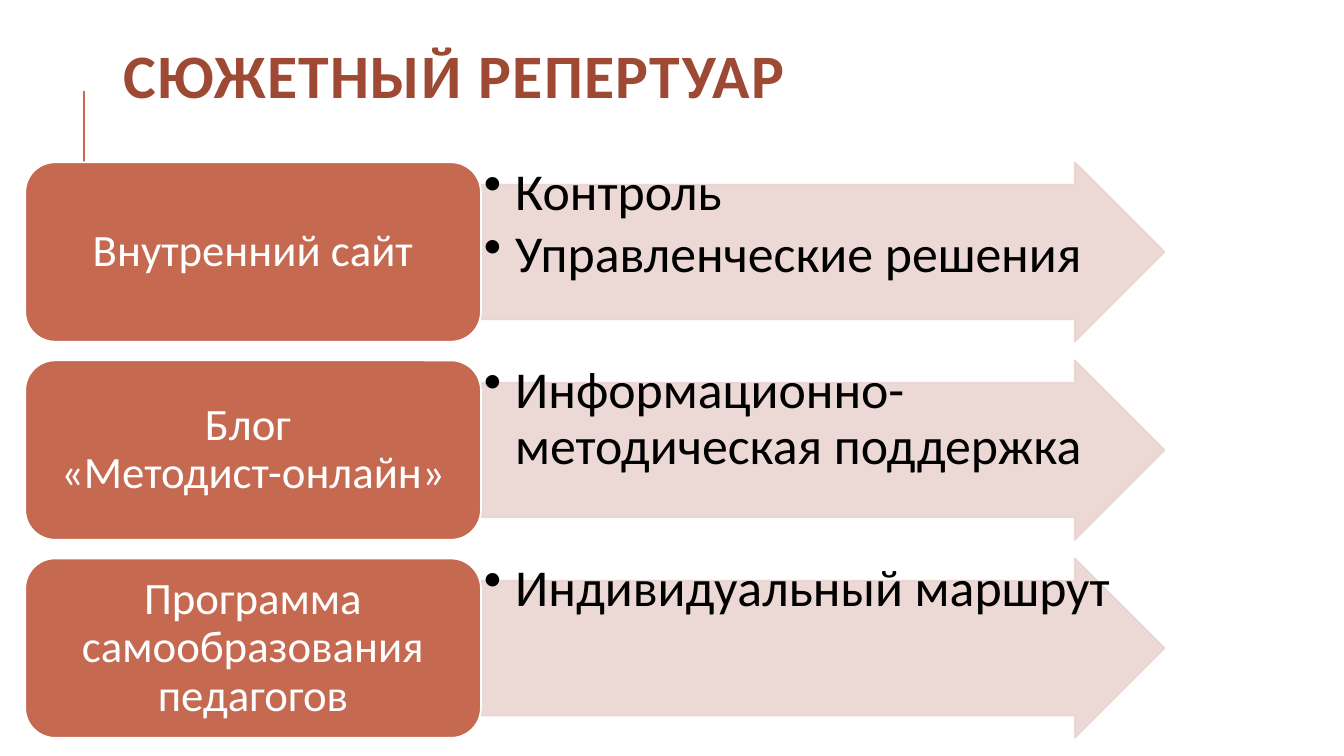
from lxml.etree import SubElement
from pptx import Presentation
from pptx.dml.color import RGBColor
from pptx.enum.shapes import MSO_CONNECTOR, MSO_SHAPE
from pptx.enum.text import MSO_ANCHOR, PP_ALIGN
from pptx.oxml.ns import qn
from pptx.util import Pt

PX = 9144  # 100 px to the inch
FONT = "Calibri"
TERRACOTTA, RUST, BLUSH = "C66951", "9E4934", "EAD4D0"
WHITE, BLACK = "FFFFFF", "000000"

LABEL_X, LABEL_W = 25, 452
ARROW_X, ARROW_W = LABEL_X + LABEL_W, 678
ROW_TOP, ROW_H, ROW_STEP = 161, 178, 196.5
ROWS = [
    ("Внутренний сайт", ["Контроль", "Управленческие решения"]),
    ("Блог \n«Методист-онлайн»", ["Информационно-методическая поддержка"]),
    ("Программа самообразования педагогов", ["Индивидуальный маршрут"]),
]


def px(n):
    return round(n * PX)


def rgb(color):
    return RGBColor.from_string(color)


def set_frame(tf, anchor, left, top, right, bottom):
    tf.word_wrap = True
    tf.vertical_anchor = anchor
    tf.margin_left, tf.margin_top = px(left), px(top)
    tf.margin_right, tf.margin_bottom = px(right), px(bottom)


def write(p, text, size, color, align=PP_ALIGN.LEFT, spacing=0.9, bold=False):
    p.text = text
    p.alignment = align
    p.line_spacing = spacing
    for r in p.runs:
        r.font.name = FONT
        r.font.size = Pt(size)
        r.font.bold = bold
        r.font.color.rgb = rgb(color)


def add_bullet(p):
    pPr = p._p.get_or_add_pPr()
    pPr.set("marL", str(px(31)))
    pPr.set("indent", str(px(-31)))
    SubElement(pPr, qn("a:buChar")).set("char", "•")


def add_block(s, kind, x, y, w, h, fill, line):
    sp = s.shapes.add_shape(kind, px(x), px(y), px(w), px(h))
    sp.shadow.inherit = False
    sp.fill.solid()
    sp.fill.fore_color.rgb = rgb(fill)
    sp.line.color.rgb = rgb(line)
    sp.line.width = Pt(1.25)
    return sp


def add_title(s):
    box = s.shapes.add_textbox(px(113), px(51), px(1063), px(113))
    set_frame(box.text_frame, MSO_ANCHOR.TOP, 10, 0, 10, 0)
    p = box.text_frame.paragraphs[0]
    write(p, "СЮЖЕТНЫЙ РЕПЕРТУАР", 44.1, RUST, spacing=0.8, bold=True)
    p.runs[0].font._element.set("spc", "100")


def add_accent_line(s):
    line = s.shapes.add_connector(
        MSO_CONNECTOR.STRAIGHT, px(83), px(190), px(83), px(90))
    line.line.color.rgb = rgb(TERRACOTTA)
    line.line.width = Pt(1.5)
    SubElement(line._element.spPr, qn("a:effectLst"))


def add_arrow(s, y):
    sp = add_block(s, MSO_SHAPE.RIGHT_ARROW, ARROW_X, y, ARROW_W, ROW_H,
                   BLUSH, BLUSH)
    sp.adjustments[0], sp.adjustments[1] = 0.75, 0.5
    for clr in sp._element.spPr.iter(qn("a:srgbClr")):
        SubElement(clr, qn("a:alpha")).set("val", "90000")


def add_bullets(s, y, items):
    box = s.shapes.add_textbox(px(ARROW_X), px(y), px(ARROW_W), px(ROW_H))
    tf = box.text_frame
    set_frame(tf, MSO_ANCHOR.TOP, 3, 3, 3, 3)
    for i, item in enumerate(items):
        p = tf.add_paragraph() if i else tf.paragraphs[0]
        write(p, item, 37, BLACK)
        p.space_after = Pt(5)
        add_bullet(p)


def add_label(s, y, text):
    sp = add_block(s, MSO_SHAPE.ROUNDED_RECTANGLE, LABEL_X, y, LABEL_W, ROW_H,
                   TERRACOTTA, WHITE)
    set_frame(sp.text_frame, MSO_ANCHOR.MIDDLE, 5, 0, 5, 0)
    write(sp.text_frame.paragraphs[0], text, 32, WHITE, PP_ALIGN.CENTER)


def main():
    prs = Presentation()
    prs.slide_width, prs.slide_height = px(1333), px(750)
    s = prs.slides.add_slide(prs.slide_layouts[6])
    add_accent_line(s)
    add_title(s)
    for i, (label, items) in enumerate(ROWS):
        y = ROW_TOP + i * ROW_STEP
        add_arrow(s, y)
        add_bullets(s, y, items)
        add_label(s, y, label)
    prs.save("out.pptx")


if __name__ == "__main__":
    main()
